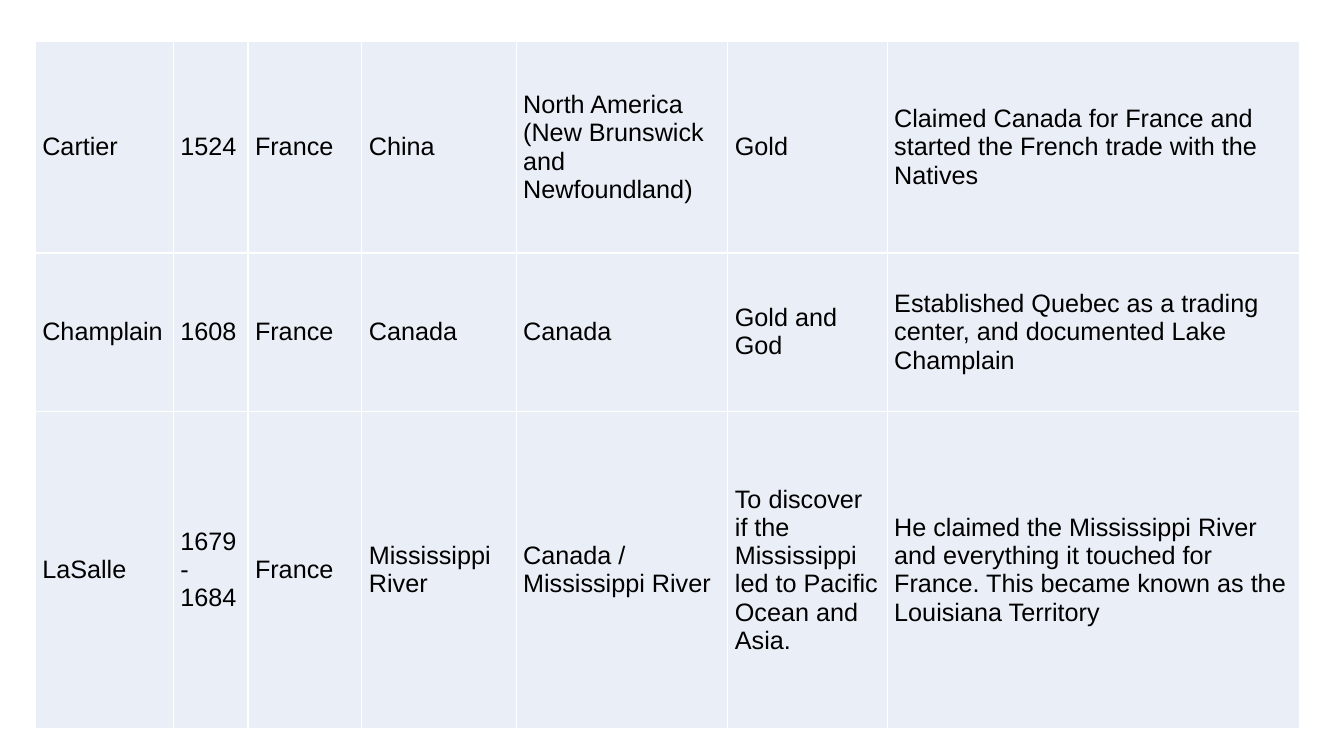
import pptx
import pptx.util
import pptx.dml.color
import pptx.enum.text
import pptx.oxml
import pptx.oxml.ns
from dataclasses import dataclass
from pptx.util import Inches


@dataclass(frozen=True)
class Theme:
    font: str = "Arial"
    size: int = 18
    after: int = 12
    ink: str = "000000"
    fill: str = "EAEFF7"
    rule: str = "FFFFFF"
    weight: int = 1


THEME = Theme()
WIDTHS = [1.37, 0.74, 1.13, 1.53, 2.1, 1.58, 4.09]
HEIGHTS = [2.1, 1.57, 3.15]
ROWS = [
    ["Cartier", "1524", "France", "China",
     "North America (New Brunswick and Newfoundland)", "Gold",
     "Claimed Canada for France and started the French trade with the Natives"],
    ["Champlain", "1608", "France", "Canada", "Canada", "Gold and God",
     "Established Quebec as a trading center, and documented Lake Champlain"],
    ["LaSalle", "1679- 1684", "France", "Mississippi River",
     "Canada / Mississippi River",
     "To discover if the Mississippi led to Pacific Ocean and Asia.",
     "He claimed the Mississippi River and everything it touched for France. "
     "This became known as the Louisiana Territory"],
]


def color(code):
    return pptx.dml.color.RGBColor.from_string(code)


def add_rules(cell):
    props = cell._tc.get_or_add_tcPr()
    width = pptx.util.Pt(THEME.weight)
    space = pptx.oxml.ns.nsdecls("a")
    for side in "LRTB":
        props.append(pptx.oxml.parse_xml(
            f'<a:ln{side} {space} w="{width}"><a:solidFill>'
            f'<a:srgbClr val="{THEME.rule}"/></a:solidFill></a:ln{side}>'))


def fill_cell(cell, text):
    add_rules(cell)
    cell.fill.solid()
    cell.fill.fore_color.rgb = color(THEME.fill)
    cell.vertical_anchor = pptx.enum.text.MSO_ANCHOR.MIDDLE
    cell.margin_left = cell.margin_right = Inches(0.07)
    cell.margin_top = cell.margin_bottom = 0
    para = cell.text_frame.paragraphs[0]
    para.space_after = pptx.util.Pt(THEME.after)
    run = para.add_run()
    run.text = text
    run.font.name = THEME.font
    run.font.size = pptx.util.Pt(THEME.size)
    run.font.color.rgb = color(THEME.ink)


def add_grid(slide, left, top):
    frame = slide.shapes.add_table(
        len(ROWS), len(WIDTHS), Inches(left), Inches(top),
        Inches(sum(WIDTHS)), Inches(sum(HEIGHTS)))
    table = frame.table
    table.first_row = False
    table.horz_banding = False
    for column, width in zip(table.columns, WIDTHS):
        column.width = Inches(width)
    for row, height, texts in zip(table.rows, HEIGHTS, ROWS):
        row.height = Inches(height)
        for cell, text in zip(row.cells, texts):
            fill_cell(cell, text)


def main():
    deck = pptx.Presentation()
    deck.slide_width = Inches(13.33)
    deck.slide_height = Inches(7.5)
    slide = deck.slides.add_slide(deck.slide_layouts[6])
    add_grid(slide, 0.35, 0.41)
    deck.save("out.pptx")


if __name__ == "__main__":
    main()
